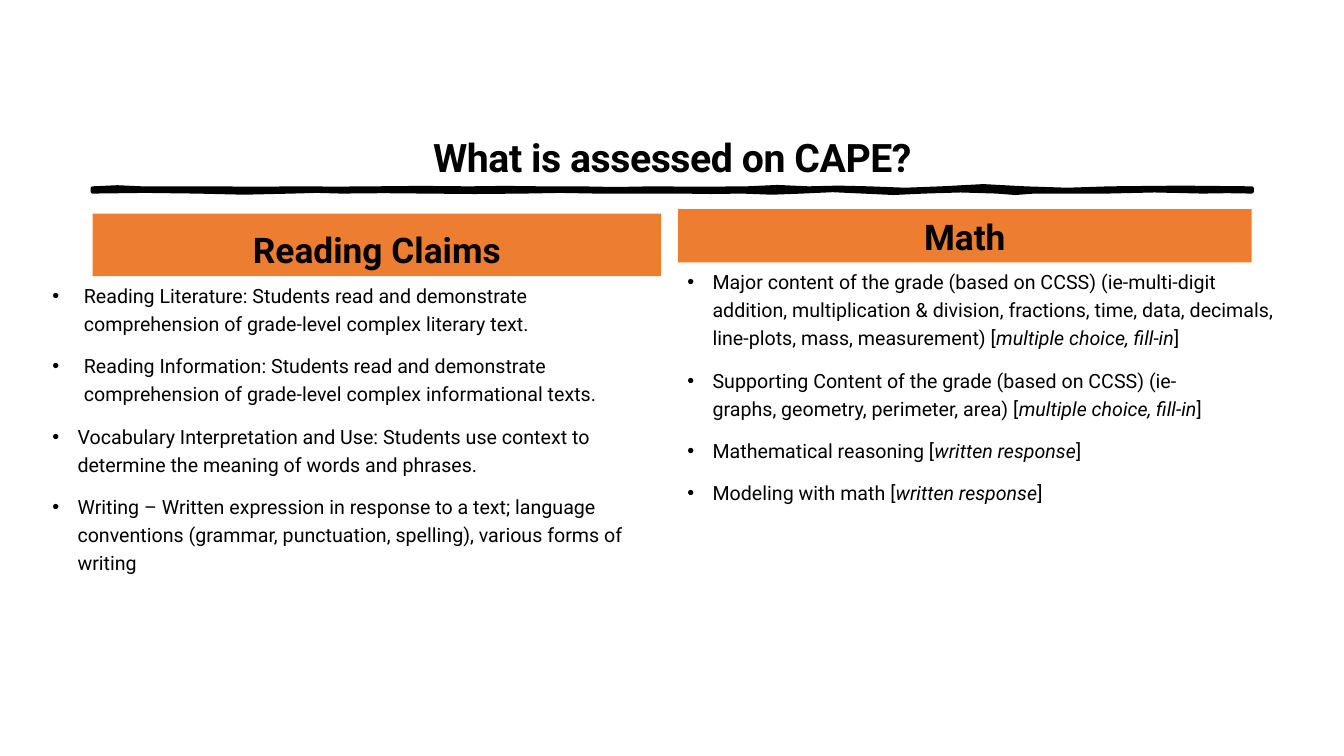
from lxml.etree import SubElement
from pptx import Presentation
from pptx.dml.color import RGBColor
from pptx.enum.text import MSO_ANCHOR as Anchor, MSO_AUTO_SIZE as AutoSize, PP_ALIGN as Align
from pptx.oxml.ns import qn
from pptx.util import Pt

BLACK = RGBColor(0x00, 0x00, 0x00)
ORANGE = RGBColor(0xED, 0x7D, 0x31)
FONT = "Roboto"
HARD_SPACE = chr(160)  # keeps two words on one line

# Content: each bullet is (indent, text, italic answer format or None)
TITLE = "What is assessed on CAPE?"
READING = [
    (22.5, "Reading Literature: Students read and demonstrate comprehension of "
           "grade-level complex literary text.", None),
    (22.5, "Reading Information: Students read and demonstrate comprehension of "
           "grade-level complex informational texts.", None),
    (18, "Vocabulary Interpretation and Use: Students use context to determine "
         "the meaning of words and phrases.", None),
    (18, f"Writing – Written expression in response to a text;{HARD_SPACE}language "
         f"conventions (grammar, punctuation,{HARD_SPACE}spelling), various forms of "
         "writing", None),
]
MATH = [
    (18, "Major content of the grade (based on CCSS) (ie-multi-digit addition, "
         "multiplication & division, fractions, time, data, decimals, line-plots, "
         "mass, measurement)", "multiple choice, fill-in"),
    (18, "Supporting Content of the grade (based on CCSS) "
         f"(ie-graphs,{HARD_SPACE}geometry, perimeter, area)", "multiple choice, fill-in"),
    (18, "Mathematical reasoning", "written response"),
    (18, "Modeling with math", "written response"),
]
# Columns: heading, its placeholder and frame, bullets, their placeholder and frame
COLUMNS = [
    ("Reading Claims", 1, (66.2, 152.6, 406.1, 44.6), READING, 2, (30.2, 195.6, 442.1, 291.6)),
    ("Math", 3, (484.3, 149.4, 409.7, 38), MATH, 4, (483.8, 185.8, 448.6, 301.7)),
]

# Hand-drawn rule: each bend is (end x, lift at its middle)
RULE_LEFT, RULE_TOP, RULE_BOTTOM = 66.2, 134.6, 136.8
TOP_EDGE = [
    (101.5, -0.8), (152.6, 0), (213.1, 0.3), (267.1, 0.2), (334.8, -0.3),
    (386.6, -0.3), (414, 0), (465.8, 0.5), (533.5, 0.3), (577.4, -1),
    (620.6, -0.5), (672.5, 1), (732.2, -1.6), (792.7, 1), (894.2, -0.5),
]
BOTTOM_EDGE = [
    (859, -0.3), (790.6, -0.8), (738.7, 0), (712.1, 1), (660.2, -0.8),
    (616.3, 1), (573.1, -1), (529.9, 0.8), (486, 0.3), (426.2, 0),
    (374.4, -0.5), (303.8, 0.3), (244.1, -0.3), (208.8, -0.5), (140.4, 0.8),
    (66.2, -0.5),
]


def trace_edge(start, base, bends):
    """Points along a row of bends that all end on the base line."""
    points = [(Pt(start), Pt(base))]
    for end, lift in bends:
        points.append((Pt((start + end) / 2), Pt(base + lift)))
        points.append((Pt(end), Pt(base)))
        start = end
    return points


def place(holder, frame, anchor):
    holder.left, holder.top, holder.width, holder.height = map(Pt, frame)
    box = holder.text_frame
    box.word_wrap, box.auto_size, box.vertical_anchor = True, AutoSize.NONE, anchor
    return box


def add_span(para, text, size, bold=False, italic=False):
    span = para.add_run()
    span.text = text
    font = span.font
    font.name, font.size, font.bold, font.italic = FONT, Pt(size), bold, italic
    font.color.rgb = BLACK
    return span


def add_heading(box, text, size):
    para = box.paragraphs[0]
    para.alignment, para.space_before = Align.CENTER, Pt(0)
    return para, add_span(para, text, size, bold=True)


def add_bullets(box, bullets):
    for number, (indent, text, answer) in enumerate(bullets):
        para = box.add_paragraph() if number else box.paragraphs[0]
        props = para._p.get_or_add_pPr()
        props.set("marL", str(Pt(indent)))
        props.set("indent", str(-Pt(indent)))
        SubElement(props, qn("a:buFont"), typeface="Arial")
        SubElement(props, qn("a:buChar"), char="•")
        para.line_spacing, para.space_before = 1.2, Pt(10 if number else 0)
        para.alignment = Align.LEFT
        add_span(para, text + " [" if answer else text, 14)
        if answer:
            add_span(para, answer, 14, italic=True)
            add_span(para, "]", 14)


deck = Presentation()
deck.slide_width, deck.slide_height = Pt(960), Pt(540)
page = deck.slides.add_slide(deck.slide_layouts.get_by_name("Comparison"))
holders = {holder.placeholder_format.idx: holder for holder in page.placeholders}

# Title
title_box = place(holders[0], (66.2, 28.8, 828, 104.4), Anchor.BOTTOM)
title_para, title_span = add_heading(title_box, TITLE, 28)
title_para.line_spacing = 0.95
title_span._r.get_or_add_rPr().set("spc", "-30")

# Hand-drawn rule under the title
outline = (trace_edge(RULE_LEFT, RULE_TOP, TOP_EDGE)
           + trace_edge(TOP_EDGE[-1][0], RULE_BOTTOM, BOTTOM_EDGE))
builder = page.shapes.build_freeform(*outline[0])
builder.add_line_segments(outline[1:], close=True)
rule = builder.convert_to_shape()
rule.shadow.inherit = False
rule.fill.solid()
rule.fill.fore_color.rgb = BLACK
rule.line.color.rgb, rule.line.width = BLACK, Pt(3)

# Columns
for heading, head_id, head_frame, bullets, list_id, list_frame in COLUMNS:
    band = holders[head_id]
    add_heading(place(band, head_frame, Anchor.BOTTOM), heading, 25.2)
    band.fill.solid()
    band.fill.fore_color.rgb = ORANGE
    add_bullets(place(holders[list_id], list_frame, Anchor.TOP), bullets)

deck.save("out.pptx")
